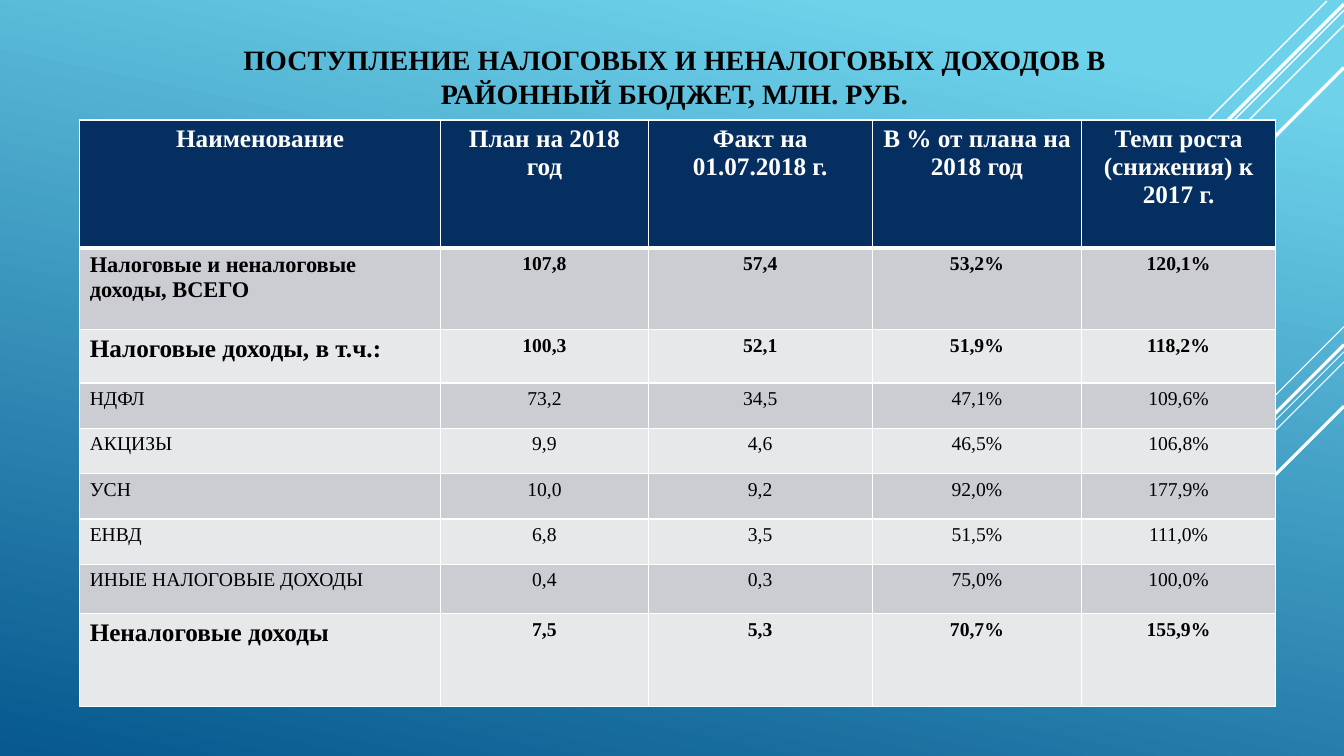
"""Build the slide on tax and non-tax revenue of the district budget."""
from dataclasses import dataclass

from lxml.etree import SubElement
from pptx import Presentation
from pptx.dml.color import RGBColor
from pptx.enum.shapes import MSO_CONNECTOR
from pptx.enum.text import MSO_ANCHOR, MSO_AUTO_SIZE, PP_ALIGN
from pptx.oxml.ns import qn
from pptx.util import Inches, Pt


@dataclass(frozen=True)
class Theme:
    font: str = "Times New Roman"
    sky: str = "6ED2EB"
    sea: str = "06588E"
    white: str = "FFFFFF"
    ink: str = "000000"
    header: str = "052F61"
    bands: tuple = ("CCCDD2", "E7E8EA")
    title_size: int = 20
    group_size: int = 18
    total_size: int = 16
    body_size: int = 14
    border: int = 1
    header_rule: int = 3


THEME = Theme()
WIDTH, HEIGHT = 13.33, 7.5
TABLE_LEFT, TABLE_TOP = 0.79, 1.19
COLUMNS = (3.58, 2.06, 2.22, 2.08, 1.92)
ROWS = (1.27, 0.81, 0.53, 0.45, 0.45, 0.45, 0.45, 0.49, 0.92)

TITLE = "ПОСТУПЛЕНИЕ НАЛОГОВЫХ И НЕНАЛОГОВЫХ ДОХОДОВ В РАЙОННЫЙ БЮДЖЕТ, МЛН. РУБ."
HEADINGS = ("Наименование", "План на 2018 год", "Факт на 01.07.2018 г.",
            "В % от плана на 2018 год", "Темп роста (снижения) к 2017 г.")
REVENUES = (
    ("Налоговые и неналоговые доходы, ВСЕГО", "107,8", "57,4", "53,2%", "120,1%"),
    ("Налоговые доходы, в т.ч.:", "100,3", "52,1", "51,9%", "118,2%"),
    ("НДФЛ", "73,2", "34,5", "47,1%", "109,6%"),
    ("АКЦИЗЫ", "9,9", "4,6", "46,5%", "106,8%"),
    ("УСН", "10,0", "9,2", "92,0%", "177,9%"),
    ("ЕНВД", "6,8", "3,5", "51,5%", "111,0%"),
    ("ИНЫЕ НАЛОГОВЫЕ ДОХОДЫ", "0,4", "0,3", "75,0%", "100,0%"),
    ("Неналоговые доходы", "7,5", "5,3", "70,7%", "155,9%"),
)
SUMMARY_SIZES = {1: THEME.total_size, 2: THEME.group_size, 8: THEME.group_size}

# Each ray: start x, start y, equal run left and down, weight.
RAYS = (
    (WIDTH, 3.24, 1.0, 0.75), (WIDTH, 3.49, 3.26, 0.75), (WIDTH, 3.59, 2.07, 0.75),
    (WIDTH, 3.42, 1.91, 2.25), (WIDTH, 4.03, 1.39, 2.25),
    (13.16, 0.01, 4.16, 1), (WIDTH, 0.1, 6.65, 1), (WIDTH, 0.25, 5.42, 1),
    (WIDTH, 0.04, 5.3, 2.5), (WIDTH, 0.67, 4.75, 2.5),
)


def paint_background(slide):
    """Fill the slide with the sky-to-sea gradient."""
    fill = slide.background.fill
    fill.gradient()
    fill.gradient_angle = 360 - 102
    for stop, color, position in zip(fill.gradient_stops, (THEME.sky, THEME.sea), (0.1, 1)):
        stop.color.rgb = RGBColor.from_string(color)
        stop.position = position


def add_ray(slide, x, y, run, weight):
    """Draw a white diagonal going down and left at 45 degrees."""
    ray = slide.shapes.add_connector(
        MSO_CONNECTOR.STRAIGHT, *map(Inches, (x, y, x - run, y + run)))
    ray.line.color.rgb = RGBColor.from_string(THEME.white)
    ray.line.width = Pt(weight)
    SubElement(ray._element.spPr, qn("a:effectLst"))


def write(frame, text, size, color, bold, align):
    """Put one formatted paragraph into a text frame."""
    frame.text = text
    paragraph = frame.paragraphs[0]
    paragraph.alignment = align
    font = paragraph.font
    font.name, font.size, font.bold = THEME.font, Pt(size), bold
    font.color.rgb = RGBColor.from_string(color)


def place_title(slide):
    """Move and format the title placeholder."""
    title = slide.shapes.title
    title.left, title.top, title.width, title.height = map(Inches, (1.69, 0.19, 10, 0.95))
    frame = title.text_frame
    frame.word_wrap = True
    frame.auto_size = MSO_AUTO_SIZE.NONE
    frame.vertical_anchor = MSO_ANCHOR.BOTTOM
    write(frame, TITLE, THEME.title_size, THEME.ink, True, PP_ALIGN.CENTER)


def style_cell(cell, color, top, bottom):
    """Give a cell white borders and a solid fill."""
    properties = cell._tc.get_or_add_tcPr()
    widths = {"lnL": THEME.border, "lnR": THEME.border, "lnT": top, "lnB": bottom}
    for side, width in widths.items():
        border = SubElement(properties, qn(f"a:{side}"), w=str(Pt(width)))
        solid = SubElement(border, qn("a:solidFill"))
        SubElement(solid, qn("a:srgbClr"), val=THEME.white)
    cell.fill.solid()
    cell.fill.fore_color.rgb = RGBColor.from_string(color)


def add_revenue_table(slide):
    """Add the revenue table with its header and banded rows."""
    table = slide.shapes.add_table(
        len(ROWS), len(COLUMNS),
        *map(Inches, (TABLE_LEFT, TABLE_TOP, sum(COLUMNS), sum(ROWS)))).table
    for column, width in zip(table.columns, COLUMNS):
        column.width = Inches(width)
    for row, height in zip(table.rows, ROWS):
        row.height = Inches(height)
    for r, texts in enumerate((HEADINGS, *REVENUES)):
        heading = r == 0
        background = THEME.header if heading else THEME.bands[(r - 1) % 2]
        top = THEME.header_rule if r == 1 else THEME.border
        bottom = THEME.header_rule if heading else THEME.border
        for c, text in enumerate(texts):
            cell = table.cell(r, c)
            style_cell(cell, background, top, bottom)
            size = SUMMARY_SIZES.get(r, THEME.body_size) if c == 0 else THEME.body_size
            write(cell.text_frame, text, THEME.group_size if heading else size,
                  THEME.white if heading else THEME.ink,
                  heading or r in SUMMARY_SIZES,
                  PP_ALIGN.CENTER if heading or c else PP_ALIGN.LEFT)


def main():
    """Assemble and save the slide."""
    deck = Presentation()
    deck.slide_width, deck.slide_height = Inches(WIDTH), Inches(HEIGHT)
    slide = deck.slides.add_slide(deck.slide_layouts.get_by_name("Title Only"))
    paint_background(slide)
    for ray in RAYS:
        add_ray(slide, *ray)
    place_title(slide)
    add_revenue_table(slide)
    deck.save("out.pptx")


if __name__ == "__main__":
    main()
